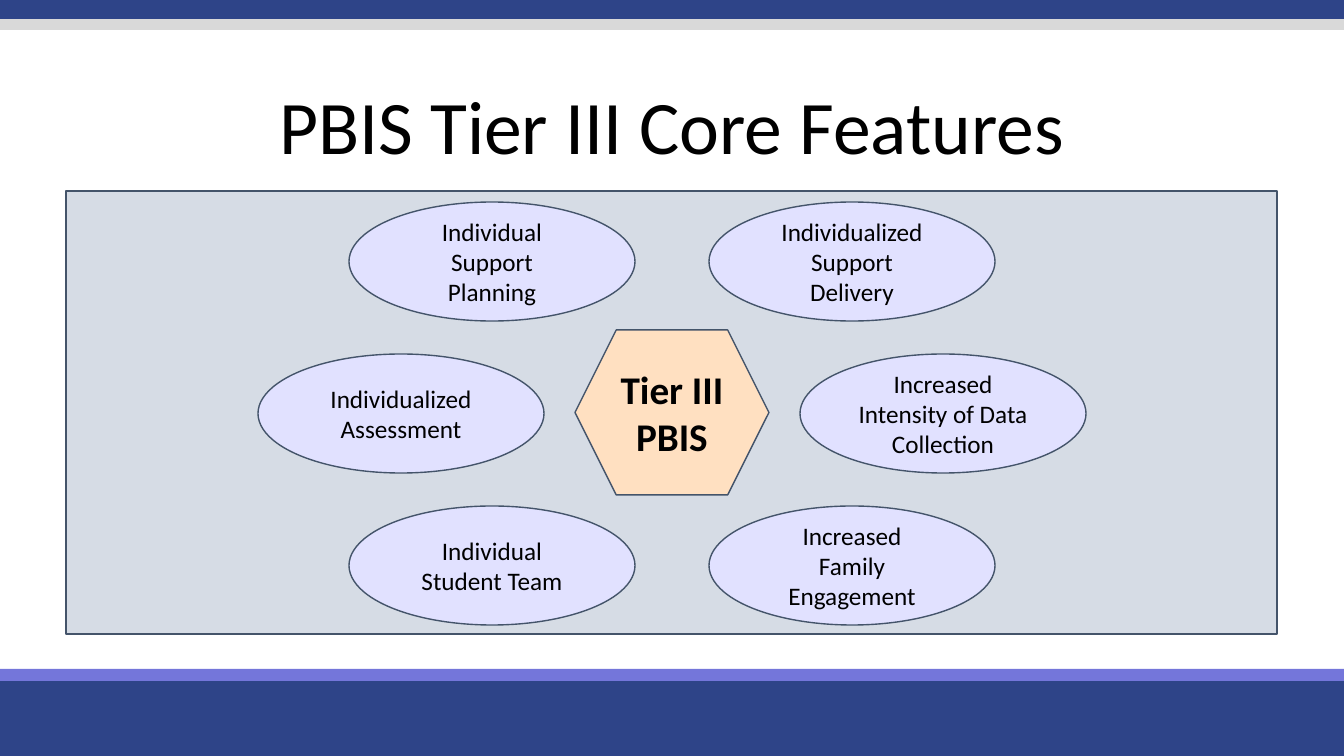
from dataclasses import dataclass

from pptx import Presentation
from pptx import util as u
from pptx.dml.color import RGBColor
from pptx.enum import shapes, text


@dataclass(frozen=True)
class Theme:
    font: str = "Calibri"
    ink: str = "000000"
    navy: str = "2E4488"
    violet: str = "7476DA"
    grey: str = "D9D9D9"
    panel: str = "D6DCE5"
    outline: str = "44546A"
    peach: str = "FFE0C1"
    lavender: str = "E1E1FF"
    title_size: int = 54
    hub_size: int = 28
    feature_size: int = 18


theme = Theme()
PX = u.Inches(1) / 100.8
WIDTH, HEIGHT = 1344, 756


def add_block(kind, box, fill, outlined=False):
    shape = slide.shapes.add_shape(kind, *(round(value * PX) for value in box))
    shape.shadow.inherit = False
    shape.fill.solid()
    shape.fill.fore_color.rgb = RGBColor.from_string(fill)
    if outlined:
        shape.line.color.rgb = RGBColor.from_string(theme.outline)
        shape.line.width = u.Pt(1)
    else:
        shape.line.fill.background()
    return shape


def write_text(shape, wording, size, bold=False):
    frame = shape.text_frame
    frame.word_wrap = True
    frame.vertical_anchor = text.MSO_ANCHOR.MIDDLE
    frame.text = wording
    for paragraph in frame.paragraphs:
        paragraph.alignment = text.PP_ALIGN.CENTER
        for run in paragraph.runs:
            run.font.name = theme.font
            run.font.size = u.Pt(size)
            run.font.bold = bold
            run.font.color.rgb = RGBColor.from_string(theme.ink)


presentation = Presentation()
presentation.slide_width = round(WIDTH * PX)
presentation.slide_height = round(HEIGHT * PX)
slide = presentation.slides.add_slide(presentation.slide_layouts[6])

# Header and footer bands
for top, height, fill in [
    (675, 81, theme.navy),
    (669, 12, theme.violet),
    (0, 19, theme.navy),
    (19, 11, theme.grey),
]:
    add_block(shapes.MSO_SHAPE.RECTANGLE, (0, top, WIDTH, height), fill)

# Title
title = slide.shapes.add_textbox(*(round(value * PX) for value in (0, 70, WIDTH, 119)))
write_text(title, "PBIS Tier III Core Features", theme.title_size)
title.text_frame.paragraphs[0].line_spacing = 0.9

# Panel with the central hexagon
add_block(shapes.MSO_SHAPE.RECTANGLE, (66, 191, 1211, 443), theme.panel, outlined=True)
hub = add_block(shapes.MSO_SHAPE.HEXAGON, (575, 330, 194, 165), theme.peach, outlined=True)
hub.text_frame.margin_left = hub.text_frame.margin_right = 0
write_text(hub, "Tier III\nPBIS", theme.hub_size, bold=True)

# Features around the hexagon: offset from the centre line, then left and right wording
CENTRE_X, FIRST_TOP, ROW_PITCH = 672, 202, 152
OVAL_WIDTH, OVAL_HEIGHT = 286, 119
feature_rows = [
    (180, "Individual\nSupport\nPlanning", "Individualized\nSupport\nDelivery"),
    (271, "Individualized\nAssessment", "Increased\nIntensity of Data\nCollection"),
    (180, "Individual\nStudent Team", "Increased\nFamily\nEngagement"),
]
for row, (offset, *pair) in enumerate(feature_rows):
    for side, wording in zip((-1, 1), pair):
        left = CENTRE_X + side * offset - OVAL_WIDTH // 2
        box = (left, FIRST_TOP + row * ROW_PITCH, OVAL_WIDTH, OVAL_HEIGHT)
        oval = add_block(shapes.MSO_SHAPE.OVAL, box, theme.lavender, outlined=True)
        write_text(oval, wording, theme.feature_size)

presentation.save("out.pptx")
